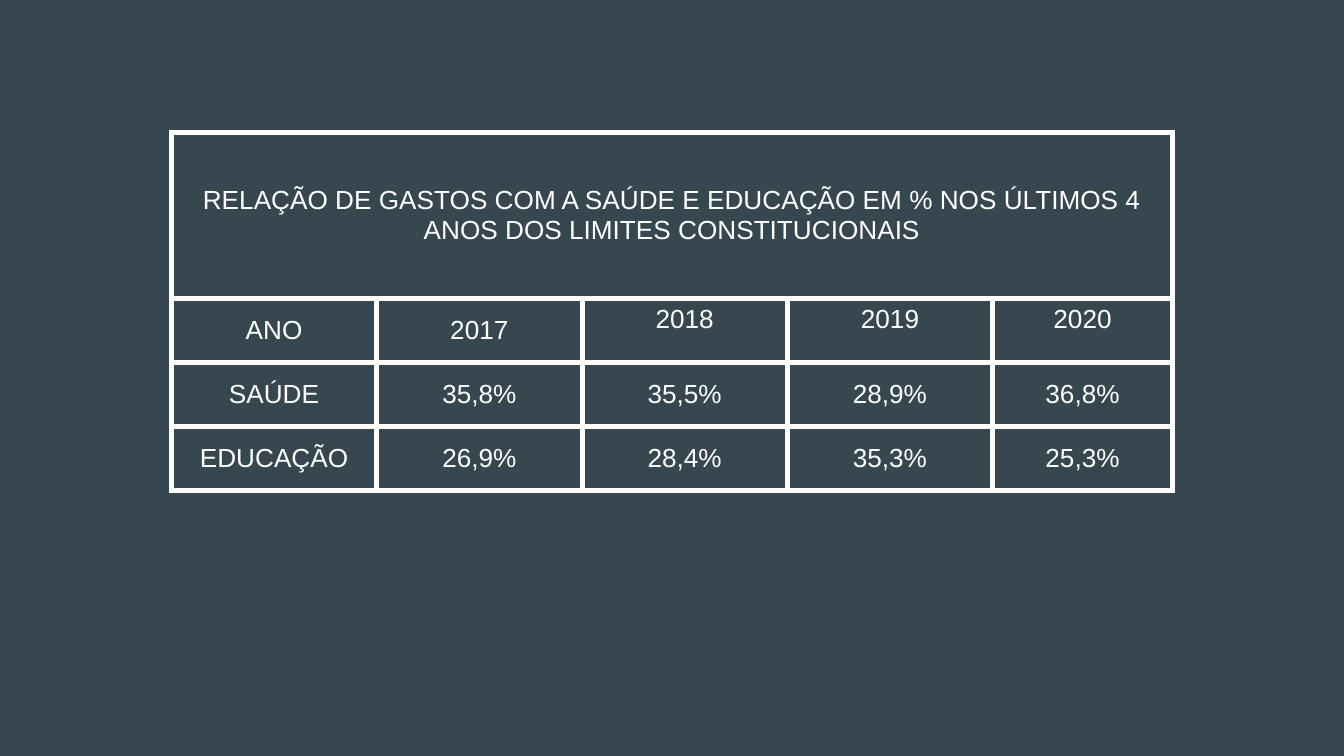
from lxml import etree
from pptx import Presentation
from pptx import util as u
from pptx.dml.color import RGBColor
from pptx.enum import text
from pptx.oxml.ns import qn

COLORS = {"background": "37474F", "ink": "FFFFFF"}
TITLE = ("RELAÇÃO DE GASTOS COM A SAÚDE E EDUCAÇÃO EM % NOS ÚLTIMOS 4 "
         "ANOS DOS LIMITES CONSTITUCIONAIS")
ROWS = [
    ["ANO", "2017", "2018", "2019", "2020"],
    ["SAÚDE", "35,8%", "35,5%", "28,9%", "36,8%"],
    ["EDUCAÇÃO", "26,9%", "28,4%", "35,3%", "25,3%"],
]
TOP_ALIGNED = {"2018", "2019", "2020"}
COL_WIDTHS = [3.88] * 4 + [3.4]
ROW_HEIGHTS = [3.14] + [1.21] * 3


def write(tf, content, size=14, font="Arial", color="ink",
          align=text.PP_ALIGN.CENTER):
    p = tf.paragraphs[0]
    p.alignment = align
    r = p.add_run()
    r.text = content
    r.font.size = u.Pt(size)
    r.font.name = font
    r.font.bold = False
    r.font.color.rgb = RGBColor.from_string(COLORS[color])


class Deck:
    def __init__(self, width, height):
        self.prs = Presentation()
        self.prs.slide_width = u.Cm(width)
        self.prs.slide_height = u.Cm(height)
        self.border_width = u.Pt(3)
        self.inset = u.Cm(0.25)

    def slide(self):
        self.s = self.prs.slides.add_slide(self.prs.slide_layouts[6])
        fill = self.s.background.fill
        fill.solid()
        fill.fore_color.rgb = RGBColor.from_string(COLORS["background"])

    def borders(self, cell):
        tcPr = cell._tc.get_or_add_tcPr()
        for i, side in enumerate(("lnL", "lnR", "lnT", "lnB")):
            ln = etree.Element(qn("a:" + side), w=str(self.border_width))
            fill = etree.SubElement(ln, qn("a:solidFill"))
            etree.SubElement(fill, qn("a:srgbClr"), val=COLORS["ink"])
            tcPr.insert(i, ln)

    def cell(self, cell, content):
        if content in TOP_ALIGNED:
            cell.vertical_anchor = text.MSO_ANCHOR.TOP
        else:
            cell.vertical_anchor = text.MSO_ANCHOR.MIDDLE
            cell.margin_left = cell.margin_right = self.inset
            cell.margin_top = cell.margin_bottom = self.inset
        write(cell.text_frame, content)

    def table(self, left, top, title, rows):
        sp = self.s.shapes.add_table(
            len(ROW_HEIGHTS), len(COL_WIDTHS), u.Cm(left), u.Cm(top),
            u.Cm(sum(COL_WIDTHS)), u.Cm(sum(ROW_HEIGHTS)))
        tbl = sp.table
        tbl.first_row = tbl.horz_banding = False
        for col, width in zip(tbl.columns, COL_WIDTHS):
            col.width = u.Cm(width)
        for row, height in zip(tbl.rows, ROW_HEIGHTS):
            row.height = u.Cm(height)
        for cell in tbl.iter_cells():
            cell.fill.background()
            self.borders(cell)
        tbl.cell(0, 0).merge(tbl.cell(0, len(COL_WIDTHS) - 1))
        self.cell(tbl.cell(0, 0), title)
        for i, values in enumerate(rows, start=1):
            for j, value in enumerate(values):
                self.cell(tbl.cell(i, j), value)


def main():
    deck = Deck(25.4, 14.29)
    deck.slide()
    deck.table(3.24, 2.5, TITLE, ROWS)
    deck.prs.save("out.pptx")


if __name__ == "__main__":
    main()
